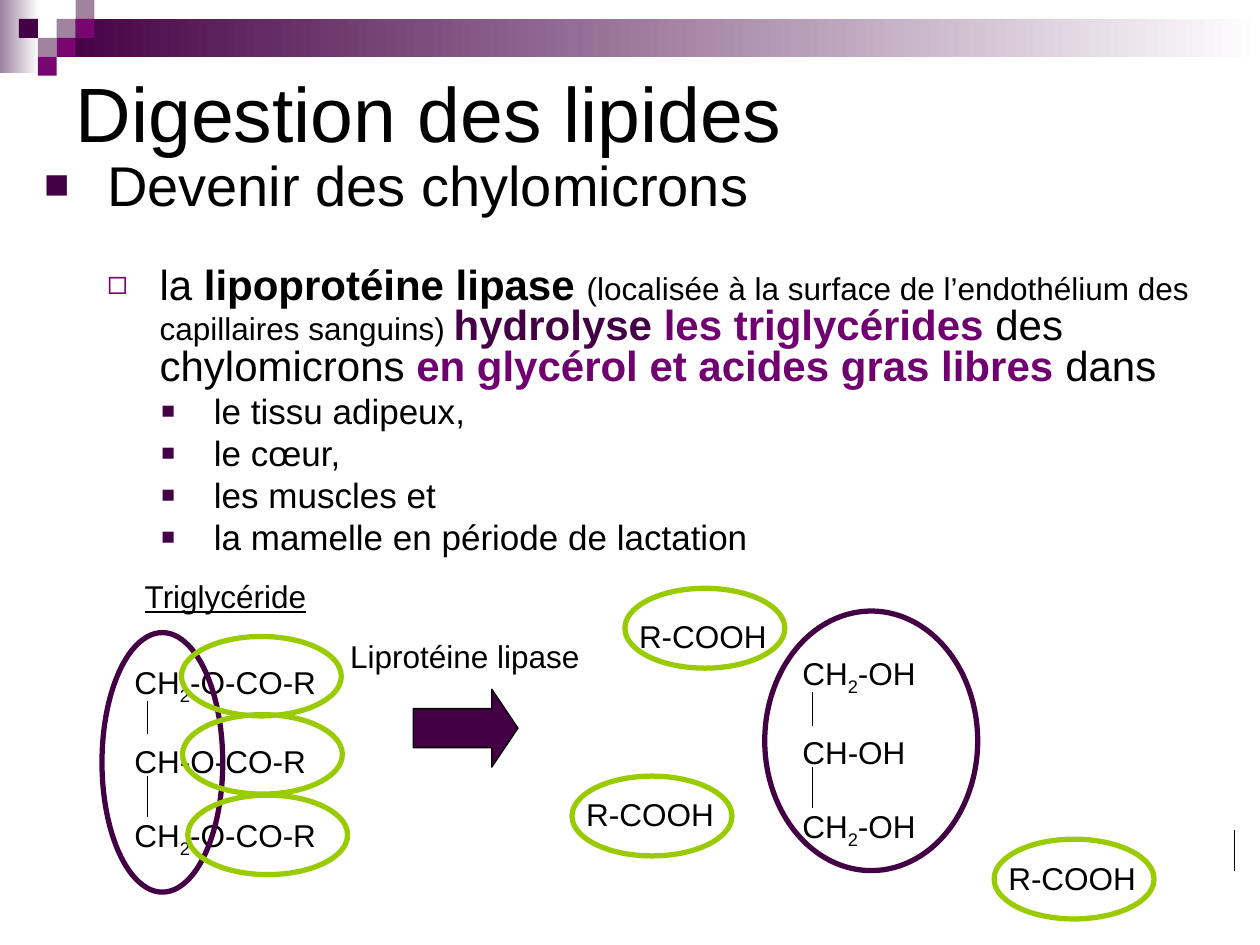
from dataclasses import dataclass
from lxml.etree import SubElement as Sub
from pptx import Presentation
from pptx.dml.color import RGBColor as Rgb
from pptx.enum.shapes import MSO_CONNECTOR as Conn, MSO_SHAPE as Form
from pptx.enum.text import MSO_ANCHOR as Anchor, MSO_AUTO_SIZE as Auto, PP_ALIGN as Align
from pptx.oxml.ns import qn
from pptx.util import Pt


@dataclass(frozen=True)
class Theme:
    font: str = "Arial"
    ink: str = "000000"
    white: str = "FFFFFF"
    dark: str = "440044"
    plum: str = "790571"
    key: str = "700070"
    mauve: str = "9F839F"
    green: str = "99CC00"
    title: int = 44
    head: int = 32
    main: int = 24
    item: int = 20
    small: int = 18
    thin: float = 0.75
    thick: float = 3


T = Theme()


# Shared helpers: lengths are points
def style(run, size, color=T.ink, bold=False):
    font = run.font
    font.name, font.size, font.bold = T.font, Pt(size), bold
    font.color.rgb = Rgb.from_string(color)


def add_form(slide, kind, box, fill=None, line=None, width=T.thin, fade=False):
    shape = slide.shapes.add_shape(kind, *map(Pt, box))
    shape.shadow.inherit = False
    if fade:
        shape.fill.gradient()
        shape.fill.gradient_angle = 0
        for stop, color in zip(shape.fill.gradient_stops, (fill, T.white)):
            stop.color.rgb = Rgb.from_string(color)
    elif fill:
        shape.fill.solid()
        shape.fill.fore_color.rgb = Rgb.from_string(fill)
    else:
        shape.fill.background()
    if line:
        shape.line.color.rgb = Rgb.from_string(line)
        shape.line.width = Pt(width)
    else:
        shape.line.fill.background()
    return shape


def add_ring(slide, box, color=T.green):
    add_form(slide, Form.OVAL, box, line=color, width=T.thick)


def add_bond(slide, x, top, end):
    bond = slide.shapes.add_connector(Conn.STRAIGHT, Pt(x), Pt(top), Pt(x), Pt(end))
    bond.line.color.rgb = Rgb.from_string(T.ink)
    bond.line.width = Pt(T.thin)
    Sub(bond._element.spPr, qn("a:effectLst"))


def add_label(slide, box, lines, gap=0):
    """Write lines of text; an underscore comes before a subscript digit."""
    frame = slide.shapes.add_textbox(*map(Pt, box)).text_frame
    frame.word_wrap = False
    for i, line in enumerate(lines):
        para = frame.paragraphs[0] if i == 0 else frame.add_paragraph()
        para.space_before = Pt(gap if i else 0)
        start, mark, rest = line.partition("_")
        for j, text in enumerate([start, rest[:1], rest[1:]] if mark else [start]):
            run = para.add_run()
            run.text = text
            style(run, T.small)
            if j == 1:
                run.font._element.set("baseline", "-25000")
    return frame


# Banner with squares on a regular grid
def draw_band(slide, box):
    x, y, w, h = box
    side = 10.8
    add_form(slide, Form.RECTANGLE, (x, y, 22.3, h), T.mauve, fade=True)
    add_form(slide, Form.RECTANGLE, (x + 32.4, y + side, w - 32.4, 2 * side), T.dark, fade=True)
    tiles = ((3, 1, T.mauve), (4, 0, T.mauve), (4, 1, T.plum), (2, 2, T.mauve),
             (1, 1, T.dark), (3, 2, T.plum), (2, 3, T.plum))
    for col, row, color in tiles:
        add_form(slide, Form.RECTANGLE, (x + col * side, y + row * side, side, side), color)


def place(holder, box):
    holder.left, holder.top, holder.width, holder.height = map(Pt, box)
    frame = holder.text_frame
    frame.auto_size, frame.word_wrap = Auto.NONE, True
    return frame


def write_title(slide, box):
    frame = place(slide.shapes.title, box)
    frame.text = "Digestion des lipides"
    frame.vertical_anchor = Anchor.MIDDLE
    para = frame.paragraphs[0]
    para.alignment = Align.LEFT
    style(para.runs[0], T.title)


def set_bullet(para, mark, color, scale, left, hang):
    props = para._p.get_or_add_pPr()
    props.set("marL", str(Pt(left)))
    props.set("indent", str(-Pt(hang)))
    Sub(Sub(props, qn("a:buClr")), qn("a:srgbClr"), val=color)
    Sub(props, qn("a:buSzPct"), val=str(scale * 1000))
    Sub(props, qn("a:buFont"), typeface=T.font)
    Sub(props, qn("a:buChar"), char=mark)


# Outline: each level has its bullet, colour, scale, left edge and hang
def write_body(slide, box):
    levels = (("■", T.dark, 75, 36, 36), ("◻", T.plum, 80, 66, 30), ("■", T.dark, 65, 97, 30))
    fact = (
        ("la ", T.main, T.ink, False),
        ("lipoprotéine lipase ", T.main, T.ink, True),
        ("(localisée à la surface de l’endothélium des capillaires sanguins) ",
         T.small, T.ink, False),
        ("hydrolyse ", T.main, T.dark, True),
        ("les triglycérides", T.main, T.key, True),
        (" des chylomicrons", T.main, T.ink, False),
        (" en glycérol et acides gras libres ", T.main, T.key, True),
        ("dans", T.main, T.ink, False),
    )
    sites = ("le tissu adipeux,", "le cœur,", "les muscles et", "la mamelle en période de lactation")
    rows = [(0, 3.6, [("Devenir des chylomicrons", T.head)]), (1, 29, fact)]
    rows += [(2, 4.8, [(site, T.item)]) for site in sites]
    frame = place(slide.placeholders[1], box)
    for i, (level, gap, parts) in enumerate(rows):
        para = frame.paragraphs[0] if i == 0 else frame.add_paragraph()
        para.level, para.line_spacing, para.space_before = level, 0.8, Pt(gap)
        set_bullet(para, *levels[level])
        for text, *look in parts:
            run = para.add_run()
            run.text = text
            style(run, *look)


# Triglyceride: the glycerol part and three fatty acid parts are ringed
def draw_fat(slide, box):
    x, y, w, h = box
    chain = "CH_2-O-CO-R"
    add_label(slide, (x + 11.5, y + 49, 119, 115), (chain, "CH-O-CO-R", chain), 20.7)
    add_bond(slide, x + 26, y + 74.2, y + 93)
    add_bond(slide, x + 26, y + 117.4, y + 140.5)
    add_ring(slide, (x, y + 35.3, 69, h - 35.3), T.dark)
    for dx, dy in ((45.4, 37.5), (46, 82.2), (49, 128.2)):
        add_ring(slide, (x + dx, y + dy, 91.4, 45.4))
    name = add_label(slide, (x + 17.3, y, 107, 29), ("Triglycéride",))
    name.paragraphs[0].runs[0].font.underline = True


def draw_step(slide, box):
    x, y, w, h = box
    arrow = add_form(slide, Form.RIGHT_ARROW, (x + 43.2, y + 33.1, 59.8, 44.6), T.dark, T.ink)
    arrow.adjustments[1] = 0.336
    add_label(slide, (x, y, w, 29), ("Liprotéine lipase",))


def draw_glycerol(slide, box):
    x, y, w, h = box
    add_label(slide, (x + 14.4, y + 20.9, 80.6, 116.6), ("CH_2-OH", "CH-OH", "CH_2-OH"), 20.7)
    add_bond(slide, x + 27.4, y + 46, y + 65.5)
    add_bond(slide, x + 27.4, y + 89.3, y + 112.3)
    add_ring(slide, box, T.dark)


def draw_acid(slide, box, drop):
    x, y, w, h = box
    add_label(slide, (x + 1, y + drop, 88, 29), ("R-COOH",))
    add_ring(slide, box)


def main():
    deck = Presentation()
    deck.slide_width, deck.slide_height = Pt(720), Pt(540)
    slide = deck.slides.add_slide(deck.slide_layouts[1])
    draw_band(slide, (0, 0, 720, 42))
    write_title(slide, (36, 34.6, 648, 59))
    write_body(slide, (18, 90, 697, 291))
    draw_fat(slide, (58.3, 326.2, 141, 183.6))
    draw_step(slide, (193, 360.7, 147, 78))
    draw_glycerol(slide, (437, 349.2, 121.7, 148.3))
    for x, y, drop in ((357.1, 336.2, 13), (326.9, 443.5, 7.2), (568.1, 479.5, 7.9)):
        draw_acid(slide, (x, y, 91.4, 45.6), drop)
    add_bond(slide, 705.6, 474.5, 497.5)
    deck.save("out.pptx")


if __name__ == "__main__":
    main()
